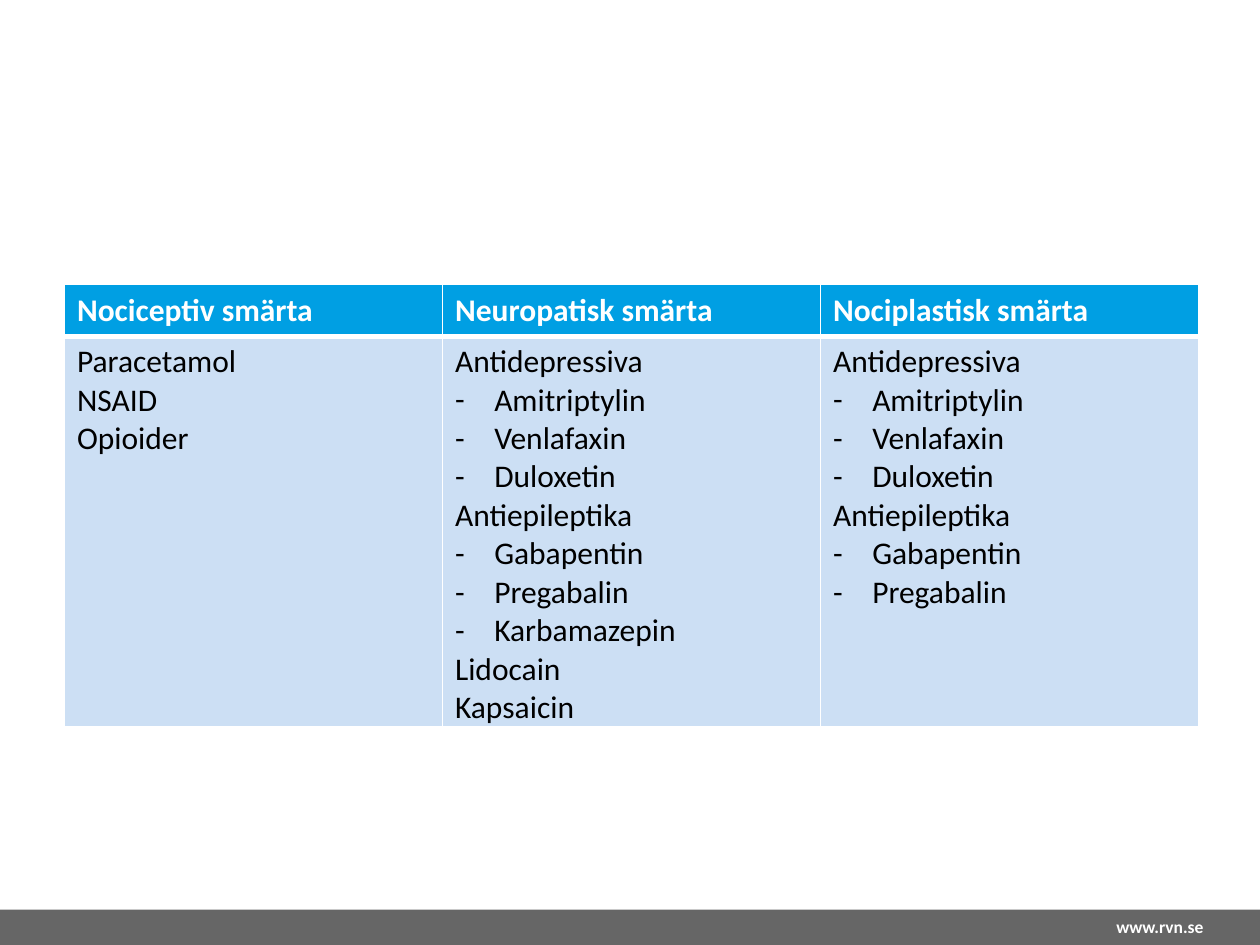
from dataclasses import dataclass
from lxml.etree import SubElement as Sub
from pptx import Presentation
from pptx.dml.color import RGBColor as Rgb
from pptx.enum.shapes import MSO_SHAPE as Kind
from pptx.enum.text import MSO_ANCHOR as Anchor, MSO_AUTO_SIZE as Fit, PP_ALIGN as Align
from pptx.oxml.ns import qn
from pptx.util import Cm, Pt


@dataclass(frozen=True)
class Theme:
    font: str = "Calibri"
    white: str = "FFFFFF"
    black: str = "000000"
    gray: str = "666666"
    head: str = "009FE3"
    body: str = "CCDFF4"
    text: int = 18
    small: int = 10
    thin: int = 1
    thick: int = 3


def paint(fill, color):
    fill.solid()
    fill.fore_color.rgb = Rgb.from_string(color)


def write(para, text, font, size, color, bold=False, align=None, dash=False):
    """Add formatted text to a paragraph, with a dash bullet if asked."""
    if dash:
        props = para._p.get_or_add_pPr()
        props.set("marL", str(Cm(0.79)))
        props.set("indent", str(-Cm(0.79)))
        Sub(props, qn("a:buFont"), typeface=font)
        Sub(props, qn("a:buChar"), char="-")
    if align is not None:
        para.alignment = align
    run = para.add_run()
    run.text = text
    run.font.name, run.font.size, run.font.bold = font, Pt(size), bold
    run.font.color.rgb = Rgb.from_string(color)


class Page:
    def __init__(self, slide, theme):
        self.slide, self.theme = slide, theme

    def band(self, *box, color):
        shape = self.slide.shapes.add_shape(Kind.RECTANGLE, *map(Cm, box))
        shape.shadow.inherit = False
        paint(shape.fill, color)
        shape.line.fill.background()

    def label(self, *box, text):
        look = self.theme
        frame = self.slide.shapes.add_textbox(*map(Cm, box)).text_frame
        frame.word_wrap = True
        frame.auto_size = Fit.SHAPE_TO_FIT_TEXT
        frame.vertical_anchor = Anchor.MIDDLE
        write(frame.paragraphs[0], text, look.font, look.small, look.white,
              bold=True, align=Align.RIGHT)

    def edges(self, cell, **widths):
        props = cell._tc.get_or_add_tcPr()
        for side in "LRTB":
            width = widths.get(side, self.theme.thin)
            line = Sub(props, qn(f"a:ln{side}"), w=str(Pt(width)))
            fill = Sub(line, qn("a:solidFill"))
            Sub(fill, qn("a:srgbClr"), val=self.theme.white)

    def cell(self, cell, lines, fill, color, bold=False):
        paint(cell.fill, fill)
        frame = cell.text_frame
        for i, line in enumerate(lines):
            para = frame.add_paragraph() if i else frame.paragraphs[0]
            write(para, line.removeprefix("- "), self.theme.font, self.theme.text,
                  color, bold=bold, dash=line.startswith("- "))

    def table(self, *box, data, rows):
        look = self.theme
        grid = self.slide.shapes.add_table(len(rows), len(data), *map(Cm, box)).table
        for row, high in zip(grid.rows, rows):
            row.height = Cm(high)
        for col, (title, lines) in enumerate(data.items()):
            top, low = grid.cell(0, col), grid.cell(1, col)
            self.edges(top, B=look.thick)
            self.cell(top, [title], look.head, look.white, bold=True)
            self.edges(low, T=look.thick)
            self.cell(low, lines, look.body, look.black)


def main():
    deck = Presentation()
    deck.slide_width, deck.slide_height = Cm(25.4), Cm(19.05)
    theme = Theme()
    page = Page(deck.slides.add_slide(deck.slide_layouts[6]), theme)

    # Footer
    page.band(0, 18.34, 25.4, 0.71, color=theme.gray)
    page.label(22.1, 18.34, 2.41, 0.69, text="www.rvn.se")

    # Drugs by type of pain
    shared = ["Antidepressiva", "- Amitriptylin", "- Venlafaxin", "- Duloxetin",
              "Antiepileptika", "- Gabapentin", "- Pregabalin"]
    drugs = {
        "Nociceptiv smärta": ["Paracetamol", "NSAID", "Opioider"],
        "Neuropatisk smärta": shared + ["- Karbamazepin", "Lidocain", "Kapsaicin"],
        "Nociplastisk smärta": shared,
    }
    page.table(1.3, 5.74, 22.86, 8.91, data=drugs, rows=[1.04, 7.87])

    deck.save("out.pptx")


if __name__ == "__main__":
    main()
